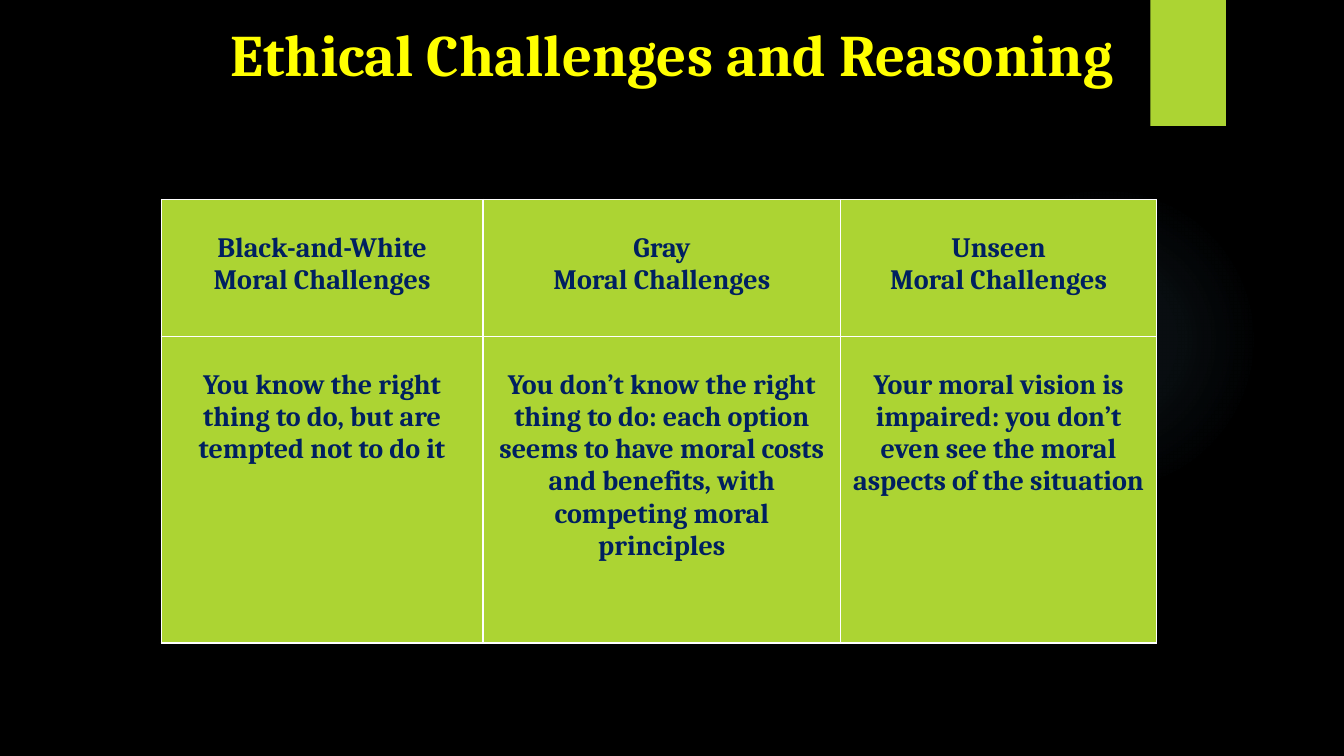
from lxml import etree
from pptx import Presentation
from pptx.dml.color import RGBColor
from pptx.enum.shapes import MSO_SHAPE as SHAPE
from pptx.enum.text import MSO_ANCHOR as ANCHOR, MSO_AUTO_SIZE as AUTO, PP_ALIGN as ALIGN
from pptx.oxml import parse_xml
from pptx.oxml.ns import nsdecls, qn
from pptx.util import Inches, Pt

WIDTH, HEIGHT = 13.33, 7.5
BLACK, WHITE, LIME = "000000", "FFFFFF", "ACD433"
NAVY, YELLOW, SKY = "002060", "FFFF00", "7AC4F0"
COLUMNS, ROWS = (3.19, 3.55, 3.13), (1.36, 3.04)
CHALLENGES = [
    ["Black-and-White\nMoral Challenges", "Gray\nMoral Challenges",
     "Unseen\nMoral Challenges"],
    ["You know the right thing to do, but are tempted not to do it",
     "You don’t know the right thing to do: each option seems to have moral "
     "costs and benefits, with competing moral principles",
     "Your moral vision is impaired: you don’t even see the moral aspects of "
     "the situation"],
]


def paint(fill, color):
    fill.solid()
    fill.fore_color.rgb = RGBColor.from_string(color)


def write(tf, text, size, color, font="Cambria", bold=True, align=ALIGN.CENTER):
    tf.word_wrap = True
    tf.text = text
    for p in tf.paragraphs:
        p.alignment = align
        for r in p.runs:
            r.font.name, r.font.size, r.font.bold = font, Pt(size), bold
            r.font.color.rgb = RGBColor.from_string(color)


def add_plain(slide, kind, box, color):
    sp = slide.shapes.add_shape(kind, *map(Inches, box))
    sp.shadow.inherit = False
    sp.line.fill.background()
    paint(sp.fill, color)
    return sp


def add_backdrop(slide):
    paint(slide.background.fill, BLACK)
    # Faint round glow, fading outwards
    glow = add_plain(slide, SHAPE.OVAL, (9.41, 1.83, 3.08, 3.08), SKY)
    stops = "".join(
        f'<a:gs pos="{pos * 1000}"><a:srgbClr val="{SKY}">'
        f'<a:alpha val="{alpha * 1000}"/></a:srgbClr></a:gs>'
        for pos, alpha in ((0, 7), (36, 6), (69, 0)))
    solid = glow._element.spPr.find(qn("a:solidFill"))
    solid.getparent().replace(solid, parse_xml(
        f'<a:gradFill {nsdecls("a")}><a:gsLst>{stops}</a:gsLst><a:path path="circle">'
        '<a:fillToRect l="50000" t="50000" r="50000" b="50000"/></a:path></a:gradFill>'))
    # Tab at the top edge
    add_plain(slide, SHAPE.RECTANGLE, (11.41, 0, 0.75, 1.25), LIME)


def add_title(slide, text, box):
    title = slide.shapes.title
    title.left, title.top, title.width, title.height = map(Inches, box)
    tf = title.text_frame
    write(tf, text, 42, YELLOW)
    tf.auto_size = AUTO.NONE
    tf.vertical_anchor = ANCHOR.MIDDLE


def add_borders(cell, color, width):
    tcPr = cell._tc.get_or_add_tcPr()
    for i, side in enumerate(("lnL", "lnR", "lnT", "lnB")):
        ln = etree.Element(qn(f"a:{side}"), w=str(Pt(width)))
        solid = etree.SubElement(ln, qn("a:solidFill"))
        etree.SubElement(solid, qn("a:srgbClr"), val=color)
        tcPr.insert(i, ln)


def add_challenge_table(slide, left, top):
    table = slide.shapes.add_table(
        len(ROWS), len(COLUMNS), Inches(left), Inches(top),
        Inches(sum(COLUMNS)), Inches(sum(ROWS))).table
    table.first_row = table.horz_banding = False
    for column, width in zip(table.columns, COLUMNS):
        column.width = Inches(width)
    for row, height, texts in zip(table.rows, ROWS, CHALLENGES):
        row.height = Inches(height)
        for cell, text in zip(row.cells, texts):
            cell.margin_left = cell.margin_right = Inches(0.07)
            cell.margin_top, cell.margin_bottom = Inches(0.32), 0
            paint(cell.fill, LIME)
            add_borders(cell, WHITE, 1)
            write(cell.text_frame, text, 20, NAVY)


def main():
    prs = Presentation()
    prs.slide_width, prs.slide_height = Inches(WIDTH), Inches(HEIGHT)
    slide = prs.slides.add_slide(prs.slide_layouts[5])
    add_backdrop(slide)
    add_challenge_table(slide, 1.6, 1.98)
    add_title(slide, "Ethical Challenges and Reasoning", (0, 0.08, WIDTH, 0.89))
    prs.save("out.pptx")


if __name__ == "__main__":
    main()
